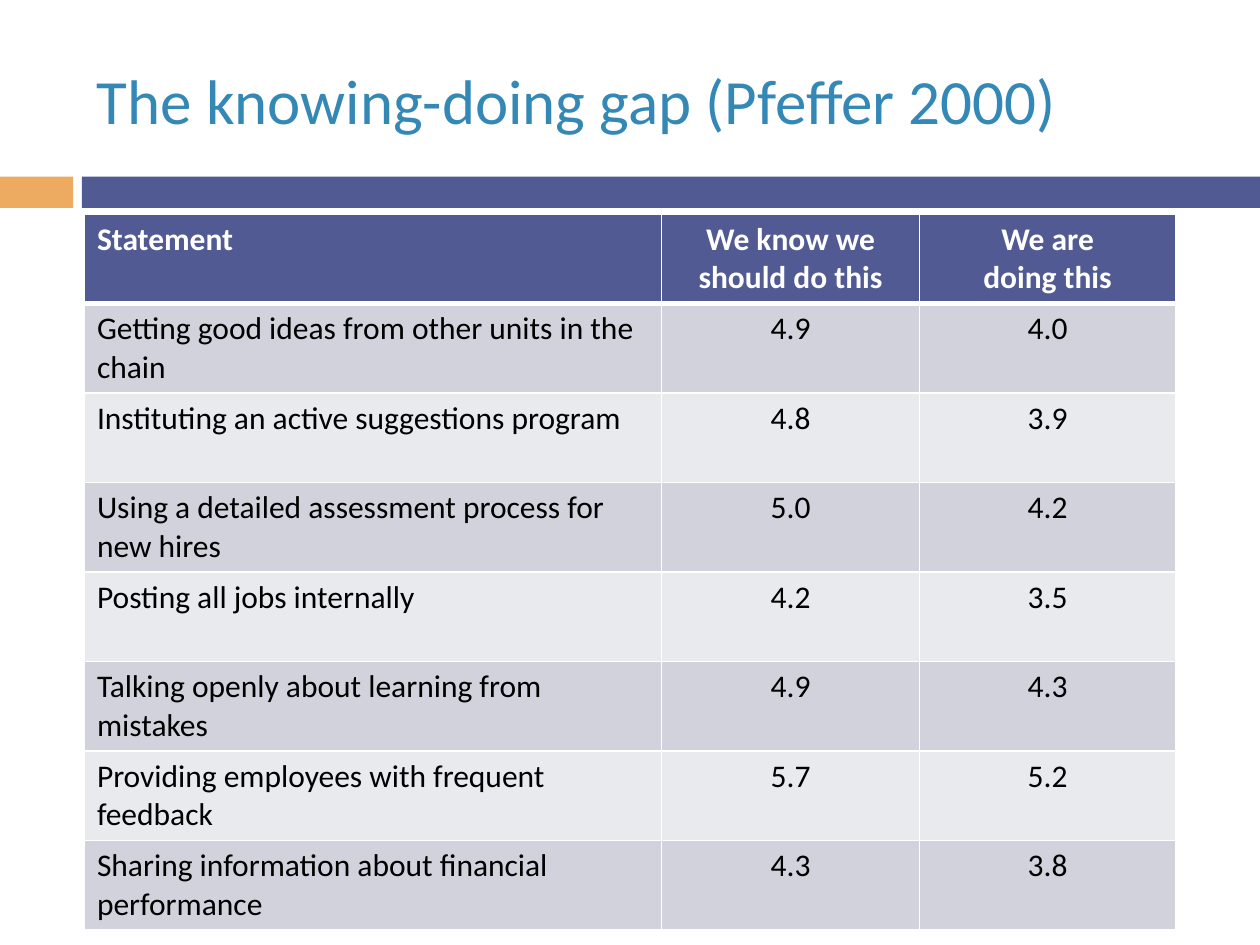
import pptx
import pptx.dml.color
import pptx.enum.shapes
import pptx.enum.text
import pptx.oxml.ns
import pptx.util
from lxml import etree

ALIGN = pptx.enum.text.PP_ALIGN
INDIGO, ORANGE, BLUE, WHITE, BLACK = "525A93", "EDAA61", "3488B6", "FFFFFF", "000000"
BANDS = ["D1D2DC", "E9EAEE"]

prs = pptx.Presentation()
prs.slide_width, prs.slide_height = pptx.util.Inches(10), pptx.util.Inches(7.5)
W, H = prs.slide_width, prs.slide_height
s = prs.slides.add_slide(prs.slide_layouts[6])


def rgb(value):
    return pptx.dml.color.RGBColor.from_string(value)


def add_run(p, text, size, color, bold=False):
    r = p.add_run()
    r.text = text
    r.font.name, r.font.size, r.font.bold = "Calibri", pptx.util.Pt(size), bold
    r.font.color.rgb = rgb(color)


# Bar across the slide, in two parts
bar_top, bar_height = int(H * 0.187), int(H * 0.033)
for left, right, color in [(0, 0.058, ORANGE), (0.065, 1, INDIGO)]:
    sp = s.shapes.add_shape(pptx.enum.shapes.MSO_SHAPE.RECTANGLE, int(W * left), bar_top,
                            int(W * (right - left)), bar_height)
    sp.shadow.inherit = False
    sp.fill.solid()
    sp.fill.fore_color.rgb = rgb(color)
    sp.line.fill.background()

# Title
margin = int(W * 0.067)
sp = s.shapes.add_textbox(margin, int(H / 30), int(W * 0.892), int(H * 0.144))
tf = sp.text_frame
tf.word_wrap = True
tf.vertical_anchor = pptx.enum.text.MSO_ANCHOR.MIDDLE
add_run(tf.paragraphs[0], "The knowing-doing gap (Pfeffer 2000)", 36, BLUE)

# Table of statements and scores
rows = [
    ("Statement", "We know we\nshould do this", "We are\ndoing this"),
    ("Getting good ideas from other units in the chain", "4.9", "4.0"),
    ("Instituting an active suggestions program", "4.8", "3.9"),
    ("Using a detailed assessment process for new hires", "5.0", "4.2"),
    ("Posting all jobs internally", "4.2", "3.5"),
    ("Talking openly about learning from mistakes", "4.9", "4.3"),
    ("Providing employees with frequent feedback", "5.7", "5.2"),
    ("Sharing information about financial performance", "4.3", "3.8"),
]
col_widths = [pptx.util.Inches(w) for w in (4.58, 2.05, 2.03)]
row_height = pptx.util.Inches(0.71)
table = s.shapes.add_table(len(rows), len(col_widths), margin, pptx.util.Inches(1.7),
                           sum(col_widths), row_height * len(rows)).table
for column, width in zip(table.columns, col_widths):
    column.width = width

for i, row in enumerate(rows):
    header = i == 0
    for j, text in enumerate(row):
        cell = table.cell(i, j)
        p = cell.text_frame.paragraphs[0]
        p.alignment = ALIGN.CENTER if j else ALIGN.LEFT
        for k, line in enumerate(text.split("\n")):
            if k:
                p.add_line_break()
            add_run(p, line, 18, WHITE if header else BLACK, header)

        # White borders, heavier between the header and the body; they precede the fill
        tcPr = cell._tc.get_or_add_tcPr()
        for side in "LRTB":
            heavy = (i, side) in [(0, "B"), (1, "T")]
            ln = etree.SubElement(tcPr, pptx.oxml.ns.qn("a:ln" + side),
                                  w=str(pptx.util.Pt(3 if heavy else 1)))
            solid = etree.SubElement(ln, pptx.oxml.ns.qn("a:solidFill"))
            etree.SubElement(solid, pptx.oxml.ns.qn("a:srgbClr"), val=WHITE)
        cell.fill.solid()
        cell.fill.fore_color.rgb = rgb(INDIGO if header else BANDS[(i - 1) % 2])

prs.save("out.pptx")
